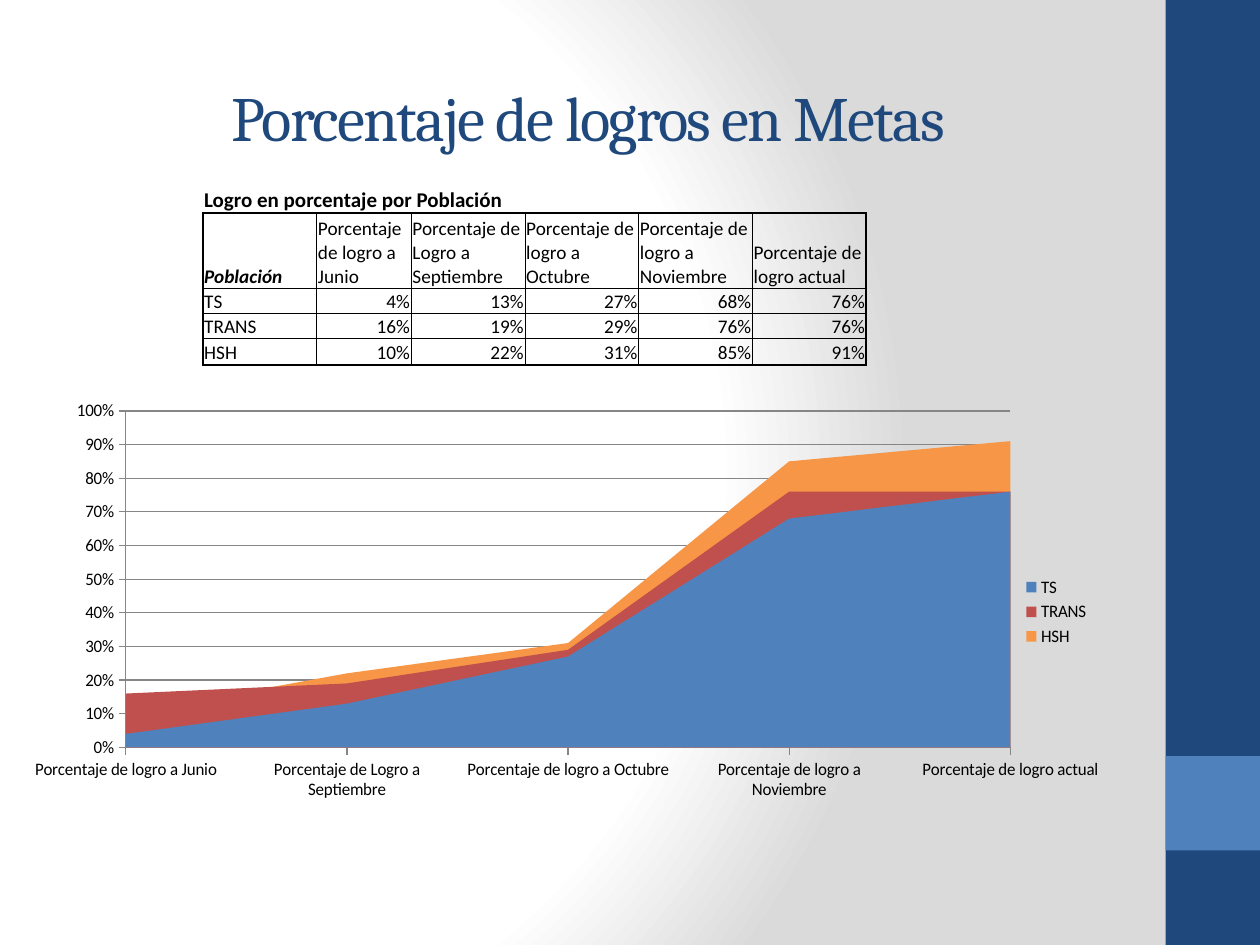
from lxml import etree
from pptx import Presentation
from pptx.chart.data import CategoryChartData
from pptx.dml.color import RGBColor
from pptx.enum.chart import XL_CHART_TYPE, XL_LEGEND_POSITION, XL_TICK_MARK
from pptx.enum.shapes import MSO_SHAPE
from pptx.enum.text import MSO_ANCHOR, PP_ALIGN
from pptx.oxml import parse_xml
from pptx.oxml.ns import qn
from pptx.util import Pt

AREA = XL_CHART_TYPE.AREA
LEGEND_RIGHT = XL_LEGEND_POSITION.RIGHT
OUTSIDE = XL_TICK_MARK.OUTSIDE
RECTANGLE = MSO_SHAPE.RECTANGLE
MIDDLE, BOTTOM = MSO_ANCHOR.MIDDLE, MSO_ANCHOR.BOTTOM
LEFT, CENTER, RIGHT = PP_ALIGN.LEFT, PP_ALIGN.CENTER, PP_ALIGN.RIGHT
NAVY, BLUE, RED, ORANGE = "1F497D", "4F81BD", "C0504D", "F79646"
BLACK, GRAY = "000000", "868686"
PLAIN_TABLE = "{2D5ABB26-0587-4C30-8999-92F81FD0307C}"


def color(value):
    return RGBColor.from_string(value)


def set_layout(parent, index, **settings):
    for old in parent.findall(qn("c:layout")):
        parent.remove(old)
    layout = etree.Element(qn("c:layout"))
    manual = etree.SubElement(layout, qn("c:manualLayout"))
    for name, value in settings.items():
        etree.SubElement(manual, qn("c:" + name)).set("val", str(value))
    parent.insert(index, layout)


periods = ["Porcentaje de logro a Junio", "Porcentaje de Logro a Septiembre",
           "Porcentaje de logro a Octubre", "Porcentaje de logro a Noviembre",
           "Porcentaje de logro actual"]
achievements = {
    "TS": (0.04, 0.13, 0.27, 0.68, 0.76),
    "TRANS": (0.16, 0.19, 0.29, 0.76, 0.76),
    "HSH": (0.10, 0.22, 0.31, 0.85, 0.91),
}

deck = Presentation()
deck.slide_width, deck.slide_height = Pt(720), Pt(540)
page = deck.slides.add_slide(deck.slide_layouts[5])

page.background.fill.gradient()
gradient = page.background._cSld.find(".//" + qn("a:gradFill"))
gradient.getparent().replace(gradient, parse_xml(
    '<a:gradFill xmlns:a="http://schemas.openxmlformats.org/drawingml/2006/main" rotWithShape="1">'
    '<a:gsLst><a:gs pos="0"><a:srgbClr val="FFFFFF"/></a:gs>'
    '<a:gs pos="75000"><a:srgbClr val="FFFFFF"/></a:gs>'
    '<a:gs pos="100000"><a:srgbClr val="DADADA"/></a:gs></a:gsLst>'
    '<a:path path="circle"><a:fillToRect l="20000" t="50000" r="100000" b="50000"/></a:path>'
    '</a:gradFill>'))

for top, height, fill in ((0, 540, NAVY), (432, 54, BLUE)):
    band = page.shapes.add_shape(RECTANGLE, Pt(666), Pt(top), Pt(54), Pt(height))
    band.shadow.inherit = False
    band.fill.solid()
    band.fill.fore_color.rgb = color(fill)
    band.line.fill.background()

title = page.shapes.title
title.left, title.top, title.width, title.height = Pt(36), Pt(21.6), Pt(600), Pt(90)
title.text_frame.text = "Porcentaje de logros en Metas"
title.text_frame.vertical_anchor = MIDDLE
para = title.text_frame.paragraphs[0]
para.alignment = CENTER
para.font.name, para.font.size = "Cambria", Pt(36)
para.font.color.rgb = color(NAVY)
para.runs[0]._r.get_or_add_rPr().set("spc", "-100")

rows = [["Logro en porcentaje por Población"] + [""] * 5, ["Población"] + periods]
rows += [[name] + [f"{value:.0%}" for value in values] for name, values in achievements.items()]
widths = (65, 54, 65, 65, 65, 65)
heights = (15.8, 43.2, 13.7, 13.7, 15.1)
last_row, last_column = len(rows) - 1, len(widths) - 1
frame = page.shapes.add_table(len(rows), len(widths), Pt(116), Pt(105.8),
                              Pt(sum(widths)), Pt(sum(heights)))
table = frame.table
table._tbl.tblPr.find(qn("a:tableStyleId")).text = PLAIN_TABLE
table.first_row = table.horz_banding = False
for column, width in zip(table.columns, widths):
    column.width = Pt(width)
for row, height in zip(table.rows, heights):
    row.height = Pt(height)
table.cell(0, 0).merge(table.cell(0, 2))

for r, texts in enumerate(rows):
    for c, text in enumerate(texts):
        cell = table.cell(r, c)
        cell.margin_left = cell.margin_right = cell.margin_top = Pt(0.72)
        cell.margin_bottom = 0
        cell.vertical_anchor = BOTTOM
        cell.text = text
        para = cell.text_frame.paragraphs[0]
        para.alignment = RIGHT if r > 1 and c > 0 else LEFT
        para.font.name, para.font.size = "Calibri", Pt(12 if r == 0 else 11)
        para.font.color.rgb = color(BLACK)
        para.font.bold = r == 0 or (r == 1 and c == 0)
        para.font.italic = r == 1 and c == 0
        heavy = {"L": c < 2, "R": c in (0, last_column),
                 "T": r < 3, "B": r in (0, 1, last_row)}
        for side in "LRTB" if r else "B":
            edge = etree.SubElement(cell._tc.get_or_add_tcPr(), qn("a:ln" + side))
            edge.set("w", str(Pt(1 if heavy[side] else 0.5)))
            ink = etree.SubElement(edge, qn("a:solidFill"))
            etree.SubElement(ink, qn("a:srgbClr")).set("val", BLACK)
        cell.fill.background()

data = CategoryChartData(number_format="0%")
data.categories = periods
for name, values in achievements.items():
    data.add_series(name, values)
chart = page.shapes.add_chart(AREA, Pt(20), Pt(219), Pt(623.5), Pt(263.5), data).chart
chart.has_title = False
chart.font.name, chart.font.size = "Calibri", Pt(10)
chart.font.color.rgb = color(BLACK)
for series, fill in zip(chart.plots[0].series, (BLUE, RED, ORANGE)):
    series.format.fill.solid()
    series.format.fill.fore_color.rgb = color(fill)

percent = chart.value_axis
percent.minimum_scale, percent.maximum_scale, percent.major_unit = 0, 1, 0.1
percent.tick_labels.number_format = "0%"
percent.tick_labels.number_format_is_linked = False
percent.has_major_gridlines = True
percent._element.find(qn("c:crossBetween")).set("val", "midCat")
for axis in (percent, chart.category_axis):
    axis.major_tick_mark = OUTSIDE
for part in (percent, percent.major_gridlines, chart.category_axis):
    part.format.line.color.rgb = color(GRAY)
    part.format.line.width = Pt(0.75)

chart.has_legend = True
chart.legend.position = LEGEND_RIGHT
chart.legend.include_in_layout = False
set_layout(chart.legend._element, 1, xMode="edge", yMode="edge", x=0.9, y=0.41)
set_layout(chart._chartSpace.chart.plotArea, 0, layoutTarget="inner", xMode="edge",
           yMode="edge", x=0.05, y=0.06, w=0.84, h=0.73)

deck.save("out.pptx")
